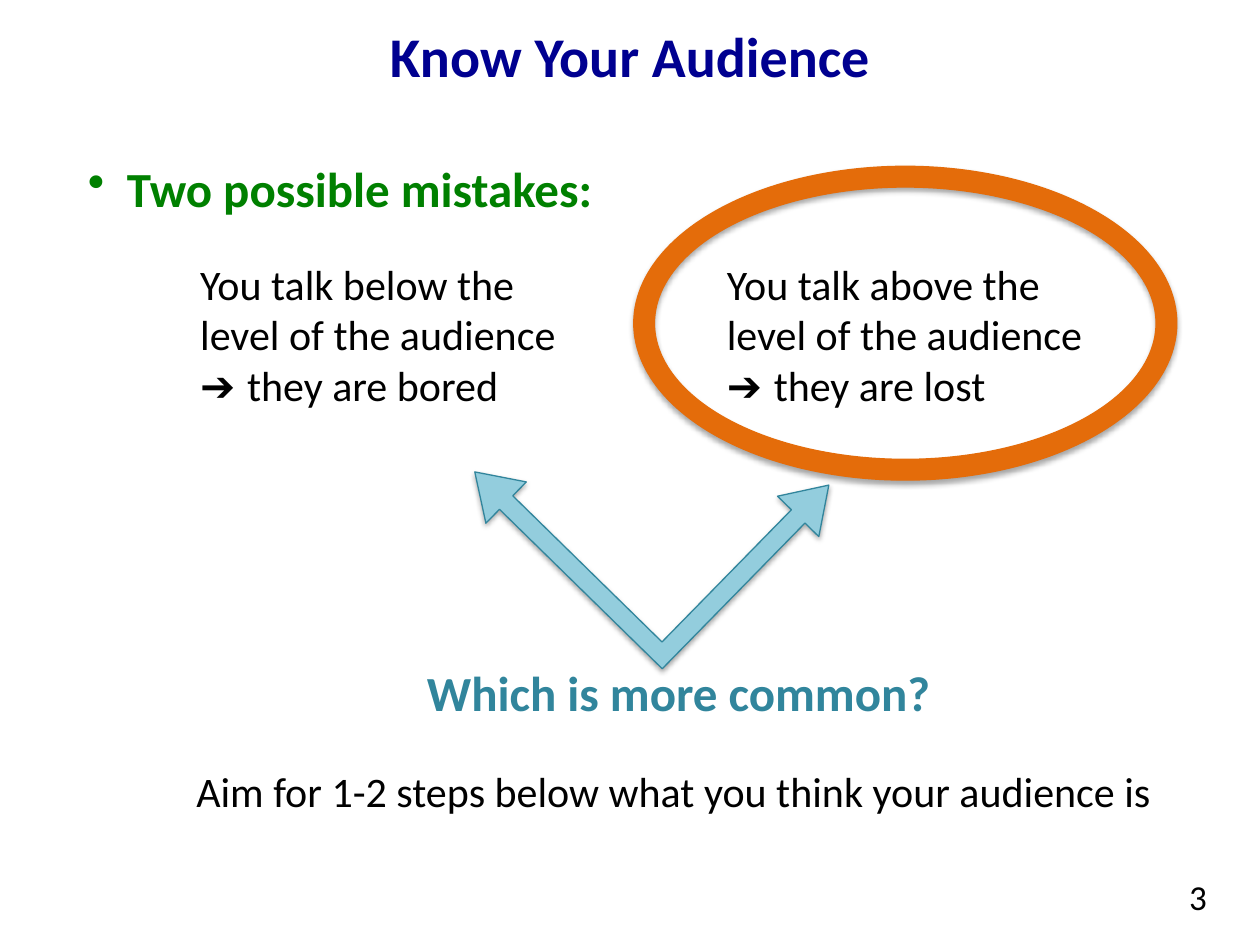
import pptx
import pptx.util
import pptx.dml.color
import pptx.enum.shapes
import pptx.enum.text
import pptx.oxml
import pptx.oxml.ns

Inches = pptx.util.Inches
Pt = pptx.util.Pt
KINDS = pptx.enum.shapes.MSO_SHAPE
ALIGN = pptx.enum.text.PP_ALIGN
ANCHOR = pptx.enum.text.MSO_ANCHOR
BLACK, TEAL, ORANGE = "000000", "31859C", "E46C0A"


def tint(code):
    """Turn a hex string into a colour."""
    return pptx.dml.color.RGBColor.from_string(code)


def write(slide, box, parts, size=24, color=BLACK, bold=False, wrap=True):
    """Add a text box of (words, font) runs and return it."""
    shape = slide.shapes.add_textbox(*map(Inches, box))
    frame = shape.text_frame
    frame.word_wrap = wrap
    para = frame.paragraphs[0]
    font = para.font
    font.name, font.size, font.bold = "Calibri", Pt(size), bold
    font.color.rgb = tint(color)
    for words, face in parts:
        run = para.add_run()
        run.text = words
        if face != "Calibri":
            run.font.name = face
    return shape


def label(slide, box, words, **style):
    """Add a text box with a single run."""
    return write(slide, box, [(words, "Calibri")], **style)


def shade(shape):
    """Give a shape a soft shadow straight below it."""
    shape.shadow.inherit = False
    space = pptx.oxml.ns.nsdecls("a")
    glow = pptx.oxml.parse_xml(
        f'<a:outerShdw {space} blurRad="{Pt(3.1)}" dist="{Pt(1.8)}" '
        'dir="5400000" rotWithShape="0"><a:srgbClr val="000000">'
        '<a:alpha val="35000"/></a:srgbClr></a:outerShdw>')
    shape._element.spPr.find(pptx.oxml.ns.qn("a:effectLst")).append(glow)


def draw(slide, kind, box, ratios, fill, line, turn=0):
    """Add a filled, outlined and shaded preset shape."""
    shape = slide.shapes.add_shape(kind, *map(Inches, box))
    for spot, ratio in enumerate(ratios):
        shape.adjustments[spot] = ratio
    shape.rotation = turn
    shape.fill.solid()
    shape.fill.fore_color.rgb = tint(fill)
    shape.line.color.rgb = tint(line)
    shape.line.width = Pt(0.75)
    shade(shape)


def title(slide, box):
    """Place the centred heading."""
    frame = label(slide, box, "Know Your Audience", size=32,
                  color="000090", bold=True).text_frame
    frame.vertical_anchor = ANCHOR.MIDDLE
    frame.paragraphs[0].alignment = ALIGN.CENTER


def bullet(slide, box):
    """Place the bulleted lead line."""
    shape = label(slide, box, "Two possible mistakes:", size=28,
                  color="008000", bold=True)
    para = shape.text_frame.paragraphs[0]
    para.space_after = Pt(12)
    props = para._p.get_or_add_pPr()
    props.set("marL", str(Inches(0.31)))
    props.set("indent", str(-Inches(0.31)))
    mark = pptx.oxml.parse_xml(
        f'<a:buChar {pptx.oxml.ns.nsdecls("a")} char="•"/>')
    props.find(pptx.oxml.ns.qn("a:defRPr")).addprevious(mark)


def pair(slide, box):
    """Place the two mistakes side by side."""
    left, top, width, height = box
    cell = 3.25
    cases = [("below", "bored"), ("above", "lost")]
    for spot, (side, mood) in enumerate(cases):
        write(slide, (left + spot * (width - cell), top, cell, height), [
            (f"You talk {side} the level of the audience ", "Calibri"),
            ("➔ ", "Arial"),
            (f"they are {mood}", "Calibri")])


def query(slide, box):
    """Place the forked arrow, its question and the advice below."""
    left, top, width, height = box
    draw(slide, KINDS.LEFT_UP_ARROW, (left + 2.56, top, 2.31, 2.12),
         (0.071, 0.108, 0.164), "93CDDD", TEAL, 44.4)
    label(slide, (left + 1.83, top + 2.31, 4.25, 0.57),
          "Which is more common?", size=28, color=TEAL, bold=True, wrap=False)
    label(slide, (left, top + height - 0.5, width, 0.5),
          "Aim for 1-2 steps below what you think your audience is",
          wrap=False)


def main():
    """Build and save the slide."""
    deck = pptx.Presentation()
    deck.slide_width, deck.slide_height = Inches(10), Inches(7.5)
    slide = deck.slides.add_slide(deck.slide_layouts[6])
    bullet(slide, (0.6, 1.21, 9.07, 0.57))
    label(slide, (9.34, 6.9, 0.64, 0.3), "3", size=20)
    title(slide, (0.5, -0.19, 9, 1.25))
    pair(slide, (1.49, 2, 7.43, 1.31))
    query(slide, (1.46, 2.9, 7.88, 3.63))
    draw(slide, KINDS.DONUT, (5.03, 1.32, 4.31, 2.49), [0.066],
         ORANGE, ORANGE)
    deck.save("out.pptx")


if __name__ == "__main__":
    main()
